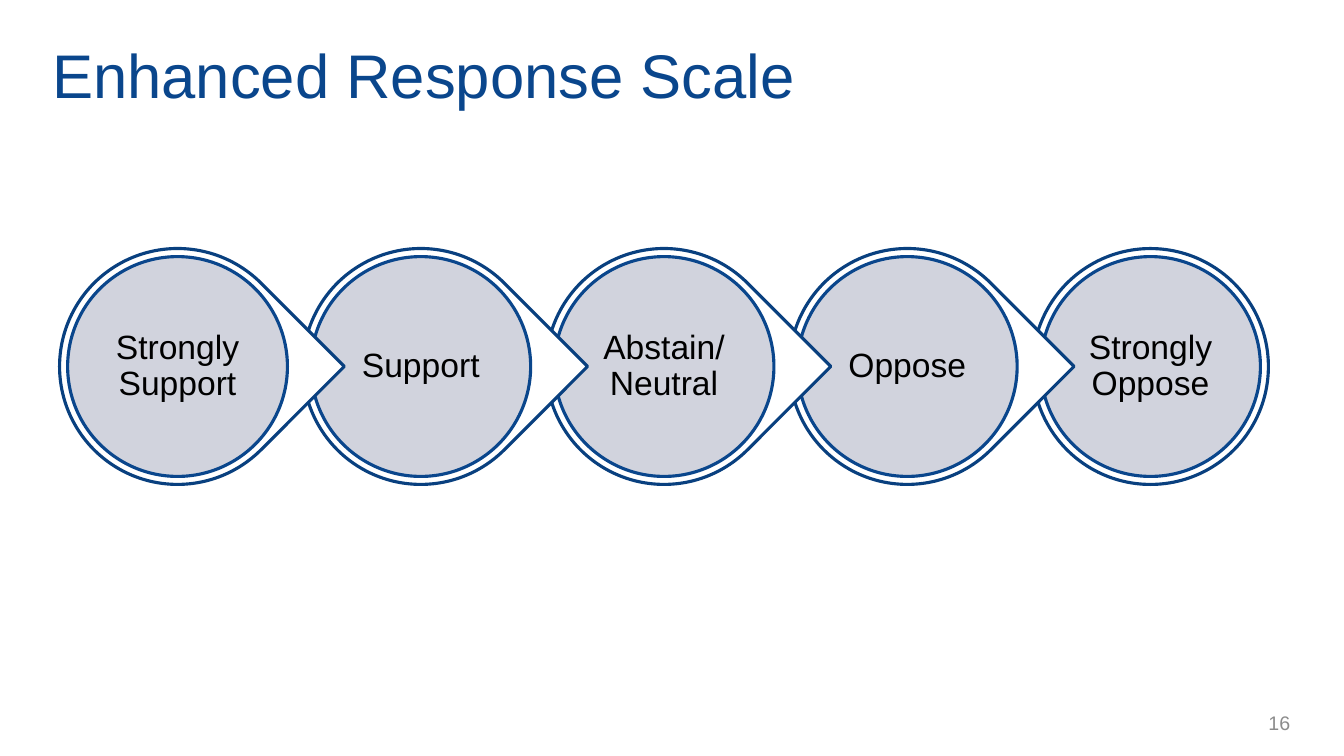
from dataclasses import dataclass

from lxml.etree import SubElement
from pptx import Presentation
from pptx.dml.color import RGBColor
from pptx.enum.shapes import MSO_SHAPE
from pptx.enum.text import MSO_ANCHOR, PP_ALIGN
from pptx.oxml.ns import qn
from pptx.shapes.autoshape import Shape
from pptx.slide import Slide
from pptx.util import Pt

COLORS = {
    "title": "0A468C",
    "ring": "09407F",
    "disc": "CCCFDA",
    "white": "FFFFFF",
    "label": "000000",
    "page": "8C8C8C",
}

FIRST_CENTER_X = 126.8
CENTER_Y = 261.8
PITCH = 173.75
RING_SIZE = 168.5
DISC_SIZE = 157
LABEL_SIZE = 112.3


@dataclass(frozen=True)
class Box:
    left: float
    top: float
    width: float
    height: float


@dataclass(frozen=True)
class Response:
    label: str
    points_to_next: bool = True


RESPONSES = [
    Response("Strongly Support"),
    Response("Support"),
    Response("Abstain/ Neutral"),
    Response("Oppose"),
    Response("Strongly Oppose", points_to_next=False),
]


def centered_square(center_x: float, size: float) -> Box:
    return Box(center_x - size / 2, CENTER_Y - size / 2, size, size)


def add_outlined(slide: Slide, preset: MSO_SHAPE, box: Box, fill: str, line: str) -> Shape:
    shape = slide.shapes.add_shape(
        preset, Pt(box.left), Pt(box.top), Pt(box.width), Pt(box.height)
    )
    shape.shadow.inherit = False
    shape.fill.solid()
    shape.fill.fore_color.rgb = RGBColor.from_string(COLORS[fill])
    shape.line.color.rgb = RGBColor.from_string(COLORS[line])
    shape.line.width = Pt(2.25)
    return shape


def set_opacity(shape: Shape, percent: int) -> None:
    color = shape.fill._xPr.find(qn("a:solidFill"))[0]
    SubElement(color, qn("a:alpha"), val=str(percent * 1000))


def add_text(slide: Slide, text: str, box: Box, size: float, color: str,
             align: PP_ALIGN = PP_ALIGN.LEFT) -> Shape:
    holder = slide.shapes.add_textbox(
        Pt(box.left), Pt(box.top), Pt(box.width), Pt(box.height)
    )
    frame = holder.text_frame
    frame.word_wrap = True
    frame.vertical_anchor = MSO_ANCHOR.MIDDLE
    paragraph = frame.paragraphs[0]
    paragraph.alignment = align
    run = paragraph.add_run()
    run.text = text
    run.font.name = "Arial"
    run.font.size = Pt(size)
    run.font.color.rgb = RGBColor.from_string(COLORS[color])
    return holder


def add_response(slide: Slide, response: Response, center_x: float) -> None:
    """Draw the ring, the disc inside it and its label."""
    preset = MSO_SHAPE.TEAR if response.points_to_next else MSO_SHAPE.OVAL
    ring = add_outlined(slide, preset, centered_square(center_x, RING_SIZE), "white", "ring")
    if response.points_to_next:
        ring.rotation = 45

    disc = add_outlined(
        slide, MSO_SHAPE.OVAL, centered_square(center_x, DISC_SIZE), "disc", "title"
    )
    set_opacity(disc, 90)

    label = add_text(slide, response.label, centered_square(center_x, LABEL_SIZE),
                     24, "label", PP_ALIGN.CENTER)
    frame = label.text_frame
    frame.margin_left = frame.margin_right = Pt(2.4)
    frame.margin_top = frame.margin_bottom = Pt(2.4)
    frame.paragraphs[0].line_spacing = 0.9


def main() -> None:
    deck = Presentation()
    deck.slide_width, deck.slide_height = Pt(960), Pt(540)
    slide = deck.slides.add_slide(deck.slide_layouts[6])

    add_text(slide, "Enhanced Response Scale", Box(30.2, 0, 917.3, 105.8), 44, "title")
    add_text(slide, "16", Box(766, 501.8, 162.7, 28.8), 14, "page", PP_ALIGN.RIGHT)

    # Right to left, so that each pointer lies over the next response.
    for position, response in reversed(list(enumerate(RESPONSES))):
        add_response(slide, response, FIRST_CENTER_X + position * PITCH)

    deck.save("out.pptx")


if __name__ == "__main__":
    main()
